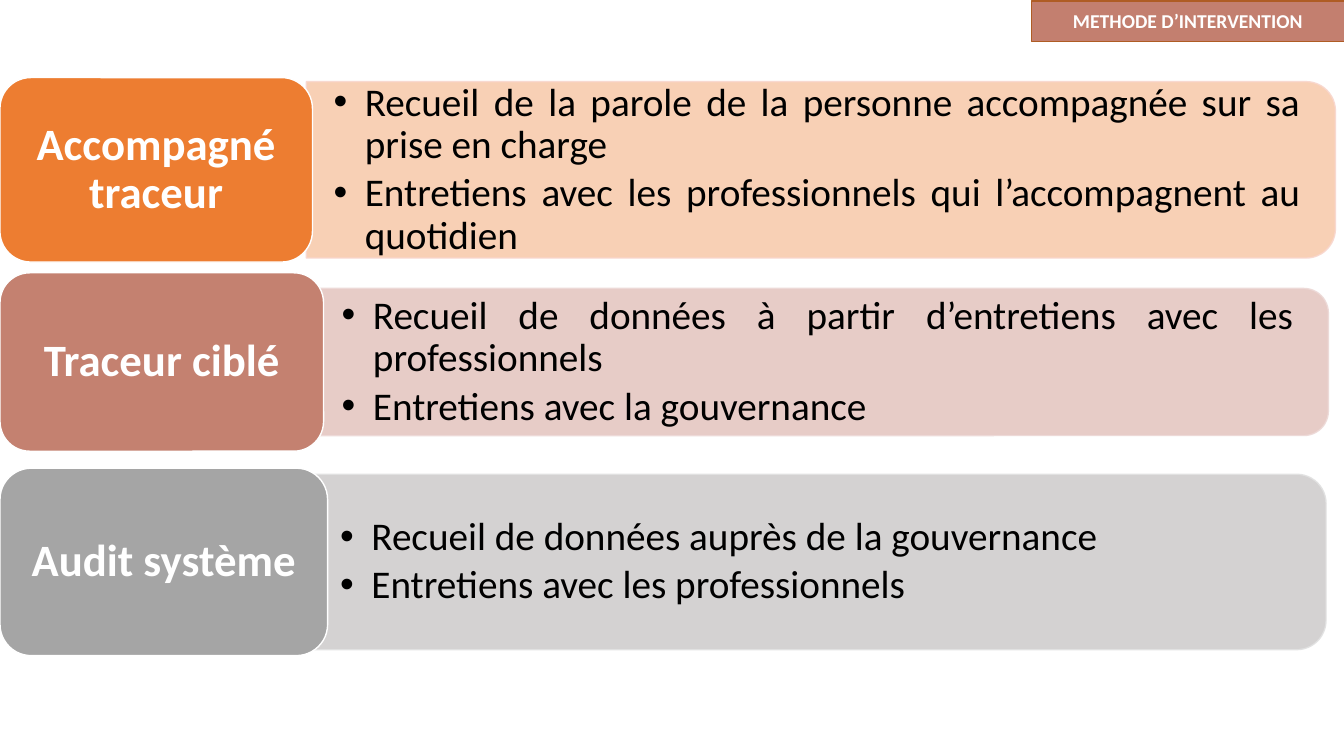
from pptx import Presentation
from pptx.dml.color import RGBColor
from pptx.enum.shapes import MSO_SHAPE
from pptx.enum.text import MSO_ANCHOR, MSO_AUTO_SIZE, PP_ALIGN
from pptx.oxml.ns import qn
from pptx.util import Inches, Pt
from lxml import etree

ROUND, TAB = MSO_SHAPE.ROUNDED_RECTANGLE, MSO_SHAPE.ROUND_2_SAME_RECTANGLE
MIDDLE, FIXED = MSO_ANCHOR.MIDDLE, MSO_AUTO_SIZE.NONE
CENTER, JUSTIFY = PP_ALIGN.CENTER, PP_ALIGN.JUSTIFY
COLS, ROWS = 160, 90
COMPARE = 4

# Row centre, label (text, width, height, fill), panel (left, width, height, fill, line), list
BANDS = [
    (20.22, ("Accompagné traceur", 37.2, 21.96, "ED7D31"),
     (36.48, 122.5, 21, "F8CBAD", "F8D7CE"),
     ["Recueil de la parole de la personne accompagnée sur sa prise en charge",
      "Entretiens avec les professionnels qui l’accompagnent au quotidien"]),
    (43.1, ("Traceur ciblé", 38.52, 21.24, "C48170"),
     (37.44, 120.7, 17.52, "E5C7C1", "EDD9D7"),
     ["Recueil de données à partir d’entretiens avec les professionnels",
      "Entretiens avec la gouvernance"]),
    (66.9, ("Audit système", 39, 22.32, "A5A5A5"),
     (37.26, 120.6, 20.88, "D0CECE", "E1E1E1"),
     ["Recueil de données auprès de la gouvernance",
      "Entretiens avec les professionnels"]),
]


def color(text):
    return RGBColor.from_string(text)


def write(shape, lines, size=28, ink="000000", bold=False, align=CENTER,
          inset=(0.1, 0.05), pitch=1.0, after=0, bullet=False):
    frame = shape.text_frame
    frame.text = "\n".join(lines)
    frame.word_wrap, frame.auto_size = True, FIXED
    frame.vertical_anchor = MIDDLE
    frame.margin_left = frame.margin_right = Inches(inset[0])
    frame.margin_top = frame.margin_bottom = Inches(inset[1])
    for para in frame.paragraphs:
        para.alignment, para.line_spacing = align, pitch
        para.space_before, para.space_after = Pt(0), Pt(after)
        if bullet:
            mark(para)
        for run in para.runs:
            font = run.font
            font.name, font.size, font.bold = "Calibri", Pt(size), bold
            font.color.rgb = color(ink)


def mark(para):
    para.level = 1
    props = para._p.get_or_add_pPr()
    props.set("marL", str(Inches(0.31)))
    props.set("indent", str(Inches(-0.31)))
    etree.SubElement(props, qn("a:buFont")).set("typeface", "Arial")
    etree.SubElement(props, qn("a:buChar")).set("char", "•")


def fade(fill, line):
    for part in (fill, line.fill):
        tag = part._xPr.find(".//" + qn("a:srgbClr"))
        etree.SubElement(tag, qn("a:alpha")).set("val", "90000")


class Board:
    def __init__(self, deck):
        self.col, self.row = deck.slide_width / COLS, deck.slide_height / ROWS
        self.slide = deck.slides.add_slide(deck.slide_layouts[COMPARE])
        self.shapes = self.slide.shapes

    def box(self, left, top, width, height):
        return (round(left * self.col), round(top * self.row),
                round(width * self.col), round(height * self.row))

    def place(self, holder, *cells):
        holder.left, holder.top, holder.width, holder.height = self.box(*cells)
        holder.element.getparent().append(holder.element)

    def paint(self, shape, fill, line):
        shape.fill.solid()
        shape.fill.fore_color.rgb = color(fill)
        shape.line.color.rgb = color(line)
        shape.line.width = Pt(1)

    def form(self, kind, cells, fill, line):
        shape = self.shapes.add_shape(kind, *self.box(*cells))
        shape.shadow.inherit = False
        self.paint(shape, fill, line)
        return shape

    def panel(self, mid, left, width, height, fill, line):
        # Upright tab, turned so that its round corners face right
        cells = (left + (width - height) / 2, mid - width / 2, height, width)
        shape = self.form(TAB, cells, fill, line)
        shape.rotation = 90
        fade(shape.fill, shape.line)

    def label(self, mid, text, width, height, fill):
        shape = self.form(ROUND, (0, mid - height / 2, width, height), fill, "FFFFFF")
        write(shape, [text], size=32, ink="FFFFFF", bold=True,
              inset=(0.13, 0.07), pitch=0.9)

    def points(self, holder, lines, mid, left, width, height):
        self.place(holder, left, mid - height / 2, width, height)
        write(holder, lines, align=JUSTIFY, inset=(0.27, 0.14),
              pitch=0.9, after=4.2, bullet=True)

    def title(self, text, *cells):
        holder = self.shapes.title
        self.place(holder, *cells)
        self.paint(holder, "C37F6F", "AF5C24")
        write(holder, [text], size=14, ink="FFFFFF", bold=True)


def main():
    deck = Presentation()
    deck.slide_width, deck.slide_height = Inches(13.333), Inches(7.5)
    board = Board(deck)
    bodies = [item for item in board.slide.placeholders
              if item.placeholder_format.idx in (1, 2, 3, 4)]

    # Three bands: panel, list, label
    for holder, (mid, label, panel, lines) in zip(bodies, BANDS):
        left, width, height = panel[:3]
        board.panel(mid, *panel)
        board.points(holder, lines, mid, left, width - 0.96, height * 0.9)
        board.label(mid, *label)

    # Corner title
    board.title("METHODE D’INTERVENTION", 122.76, 0.12, 37.32, 4.8)

    # Unused placeholder
    spare = bodies[-1].element
    spare.getparent().remove(spare)
    deck.save("out.pptx")


if __name__ == "__main__":
    main()
